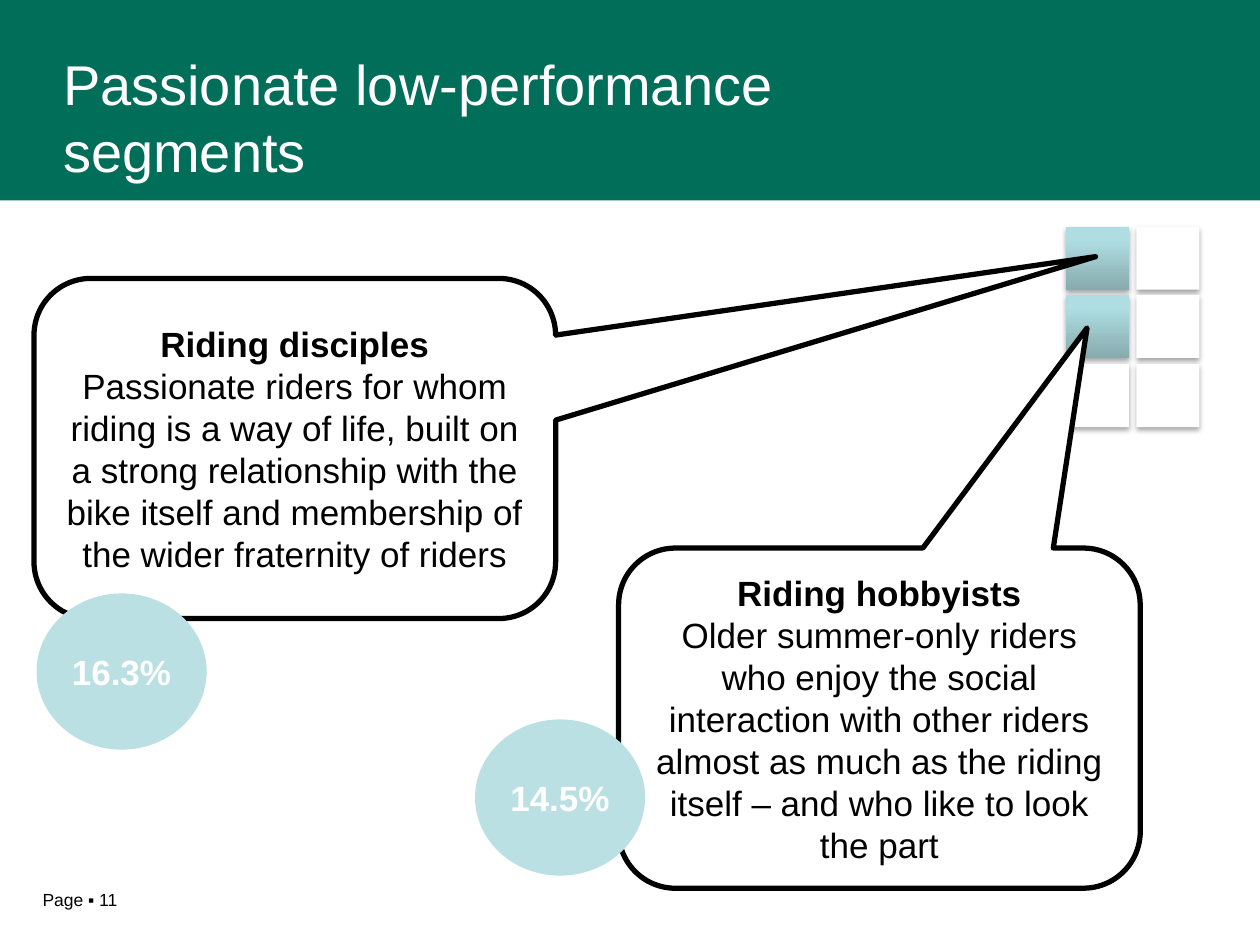
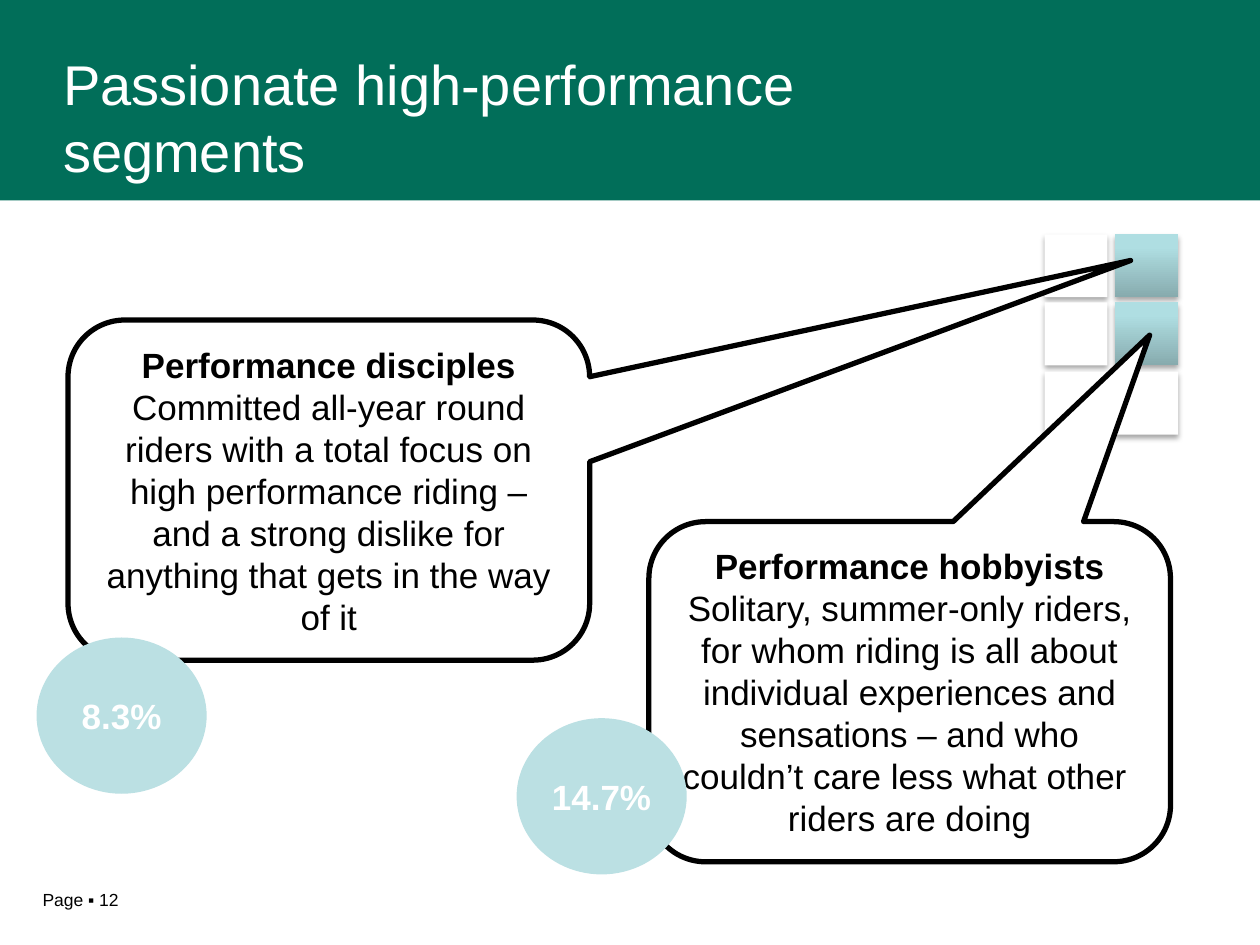
from lxml import etree
from pptx import Presentation
from pptx import util as u
from pptx.dml.color import RGBColor
from pptx.enum import shapes, text
from pptx.oxml import parse_xml
from pptx.oxml.ns import nsdecls, qn

GREEN, AQUA, WHITE, BLACK = "016E59", "BBE0E3", "FFFFFF", "000000"
SHADE = [(0, "87ABAE"), (80, "AFDEE2"), (100, "AFE0E4")]
TILE, COLUMN_PITCH, ROW_OFFSETS = 0.5, 0.56, (0, 0.54, 1.09)
CALLOUT_SIZE = (4.14, 2.7)
SHARE_SIZE = (1.35, 1.24)

segment_slides = [
    dict(title="Passionate low-performance segments", page=11,
         grid=(8.46, 1.8), shaded_column=0,
         segments=[
             dict(name="Riding disciples", at=(0.27, 2.21), tip=(1.535, -0.564),
                  profile="Passionate riders for whom riding is a way of life, built on a strong "
                          "relationship with the bike itself and membership of the wider "
                          "fraternity of riders",
                  share="16.3%", share_at=(0.29, 4.71)),
             dict(name="Riding hobbyists", at=(4.91, 4.35), tip=(0.398, -1.147),
                  profile="Older summer-only riders who enjoy the social interaction with other "
                          "riders almost as much as the riding itself – and who like to look "
                          "the part",
                  share="14.5%", share_at=(3.77, 5.71))]),
    dict(title="Passionate high-performance segments", page=12,
         grid=(8.29, 1.86), shaded_column=1,
         segments=[
             dict(name="Performance disciples", at=(0.54, 2.54), tip=(1.537, -0.675),
                  profile="Committed all-year round riders with a total focus on high performance "
                          "riding – and a strong dislike for anything that gets in the way of it",
                  share="8.3%", share_at=(0.29, 5.06)),
             dict(name="Performance hobbyists", at=(5.15, 4.14), tip=(0.46, -1.048),
                  profile="Solitary, summer-only riders, for whom riding is all about individual "
                          "experiences and sensations – and who couldn’t care less what other "
                          "\vriders are doing",
                  share="14.7%", share_at=(4.1, 5.7))]),
]


def add_block(parent, preset, at, size, fill):
    block = parent.add_shape(preset, *map(u.Inches, at + size))
    block.shadow.inherit = False
    block.fill.solid()
    block.fill.fore_color.rgb = RGBColor.from_string(fill)
    block.line.fill.background()
    return block


def write(frame, lines, size, color, align, anchor, wrap=True):
    frame.word_wrap = wrap
    frame.vertical_anchor = anchor
    for i, (words, bold) in enumerate(lines):
        paragraph = frame.paragraphs[0] if i == 0 else frame.add_paragraph()
        paragraph.text = words
        paragraph.alignment = align
        paragraph.font.name = "Arial"
        paragraph.font.size = u.Pt(size)
        paragraph.font.bold = bold
        paragraph.font.color.rgb = RGBColor.from_string(color)


LEFT, CENTER = text.PP_ALIGN.LEFT, text.PP_ALIGN.CENTER
TOP, MIDDLE = text.MSO_ANCHOR.TOP, text.MSO_ANCHOR.MIDDLE
preset = shapes.MSO_SHAPE if hasattr(shapes, "MSO_SHAPE") else shapes.MSO_AUTO_SHAPE_TYPE

deck = Presentation()
deck.slide_width, deck.slide_height = u.Inches(10), u.Inches(7.5)

for content in segment_slides:
    slide = deck.slides.add_slide(deck.slide_layouts[6])
    add_block(slide.shapes, preset.RECTANGLE, (0, 0), (10, 1.59), GREEN)

    title = slide.shapes.add_textbox(*map(u.Inches, (0.5, 0.3, 7.65, 1.25))).text_frame
    title.margin_left = title.margin_right = 0
    write(title, [(content["title"], False)], 32, WHITE, LEFT, MIDDLE)

    footer = slide.shapes.add_textbox(*map(u.Inches, (0.24, 7.01, 1.47, 0.27))).text_frame
    write(footer, [(f"Page ▪ {content['page']}", False)], 10, BLACK, LEFT, TOP)

    grid = slide.shapes.add_group_shape()
    grid_left, grid_top = content["grid"]
    for row, offset in enumerate(ROW_OFFSETS):
        for column in (1, 0):
            tile = add_block(grid.shapes, preset.RECTANGLE,
                             (grid_left + column * COLUMN_PITCH, grid_top + offset),
                             (TILE, TILE), WHITE)
            properties = tile.element.spPr
            if column == content["shaded_column"] and row < 2:
                stops = "".join(f'<a:gs pos="{pos * 1000}"><a:srgbClr val="{color}"/></a:gs>'
                                for pos, color in SHADE)
                gradient = parse_xml(f'<a:gradFill {nsdecls("a")}><a:gsLst>{stops}</a:gsLst>'
                                     '<a:lin ang="16200000" scaled="0"/></a:gradFill>')
                properties.replace(properties.find(qn("a:solidFill")), gradient)
            shadow = etree.SubElement(properties.find(qn("a:effectLst")), qn("a:outerShdw"),
                                      blurRad=str(u.Pt(3.1)), dist=str(u.Pt(1.8)),
                                      dir="5400000", rotWithShape="0")
            shade = etree.SubElement(shadow, qn("a:srgbClr"), val=BLACK)
            etree.SubElement(shade, qn("a:alpha"), val="35000")

    for segment in content["segments"]:
        callout = add_block(slide.shapes, preset.ROUNDED_RECTANGULAR_CALLOUT,
                            segment["at"], CALLOUT_SIZE, WHITE)
        callout.adjustments[0], callout.adjustments[1] = segment["tip"]
        callout.adjustments[2] = 0.167
        callout.line.color.rgb = RGBColor.from_string(BLACK)
        callout.line.width = u.Pt(3)
        write(callout.text_frame, [(segment["name"], True), (segment["profile"], False)],
              20, BLACK, CENTER, MIDDLE)

    for segment in content["segments"]:
        share = add_block(slide.shapes, preset.OVAL, segment["share_at"], SHARE_SIZE, AQUA)
        write(share.text_frame, [(segment["share"], True)], 20, WHITE, CENTER, MIDDLE, wrap=False)

deck.save("out.pptx")
